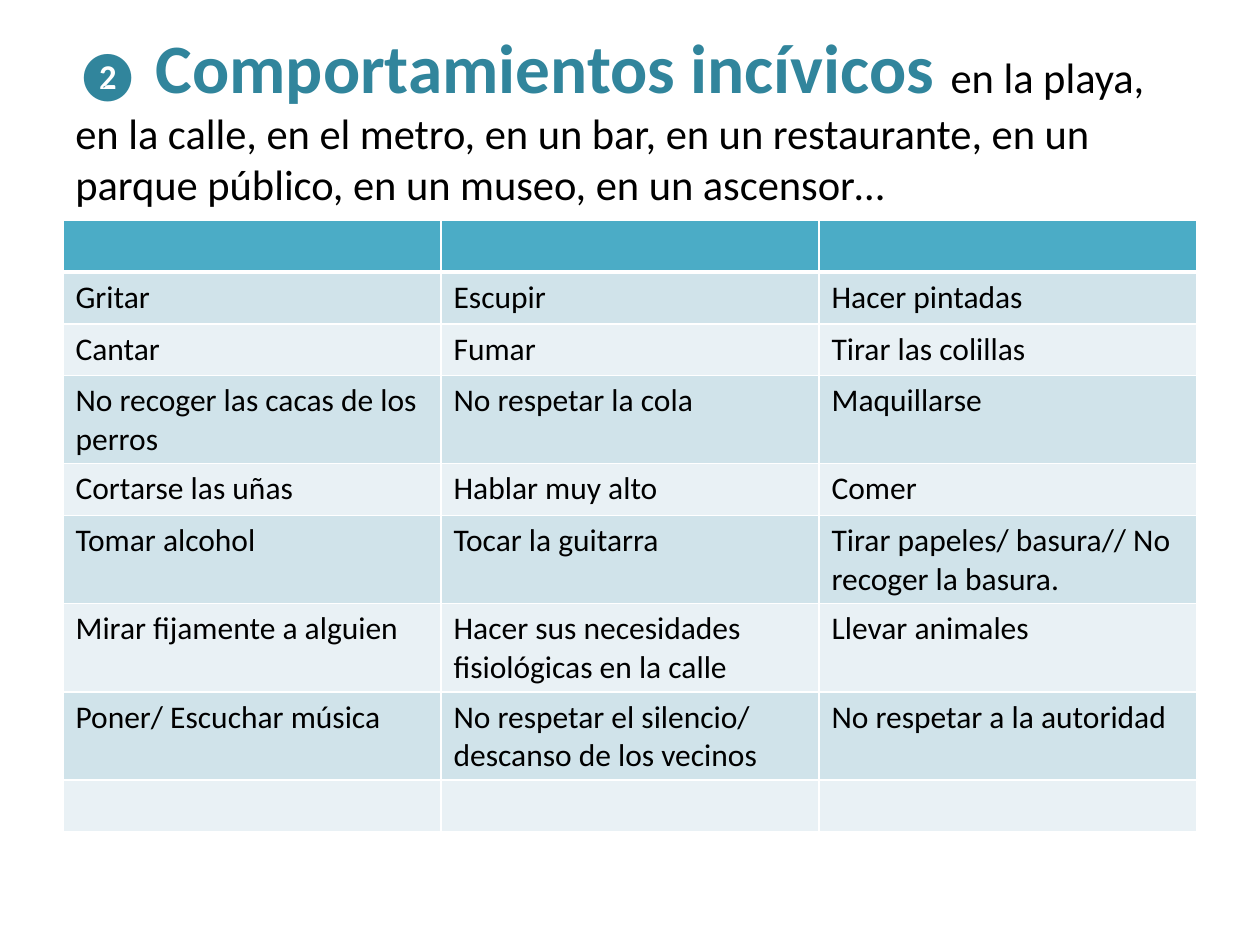
from dataclasses import dataclass

from lxml import etree
from pptx import Presentation
from pptx.dml.color import RGBColor
from pptx.enum.text import MSO_ANCHOR, PP_ALIGN
from pptx.oxml.ns import qn
from pptx.util import Inches, Pt

LEFT = PP_ALIGN.LEFT
MIDDLE = MSO_ANCHOR.MIDDLE

FONT = "Calibri"
COLORS = {
    "accent": "31859C",
    "text": "000000",
    "header": "4BACC6",
    "band_dark": "D0E3EA",
    "band_light": "E9F1F5",
    "border": "FFFFFF",
}

# Slide size and shared margins, in inches
WIDTH, HEIGHT = 10, 7.5
MARGIN = WIDTH * 0.05
CONTENT_WIDTH = WIDTH - 2 * MARGIN
ROW_HEIGHT = 0.41


@dataclass(frozen=True)
class TextPiece:
    text: str
    size: float
    color: str
    bold: bool = False


TITLE = [
    TextPiece("❷", 27.9, "accent"),
    TextPiece(" ", 39.6, "accent"),
    TextPiece("Comportamientos incívicos ", 39.6, "accent", True),
    TextPiece("en la playa, en la calle, en el metro, en un bar, en un restaurante, "
              "en un parque público, en un museo, en un ascensor…", 24.3, "text"),
]

BEHAVIOURS = [
    ("", "", ""),
    ("Gritar", "Escupir", "Hacer pintadas"),
    ("Cantar", "Fumar", "Tirar las colillas"),
    ("No recoger las cacas de los perros", "No respetar la cola", "Maquillarse"),
    ("Cortarse las uñas", "Hablar muy alto", "Comer"),
    ("Tomar alcohol", "Tocar la guitarra",
     "Tirar papeles/ basura// No recoger la basura."),
    ("Mirar fijamente a alguien",
     "Hacer sus necesidades fisiológicas en la calle", "Llevar animales"),
    ("Poner/ Escuchar música",
     "No respetar el silencio/ descanso de los vecinos",
     "No respetar a la autoridad"),
    ("", "", ""),
]


def rgb(name: str) -> RGBColor:
    return RGBColor.from_string(COLORS[name])


def add_run(paragraph, piece: TextPiece) -> None:
    run = paragraph.add_run()
    run.text = piece.text
    run.font.name = FONT
    run.font.size = Pt(piece.size)
    run.font.bold = piece.bold
    run.font.color.rgb = rgb(piece.color)


def add_title(slide) -> None:
    shape = slide.shapes.add_textbox(Inches(MARGIN), Inches(HEIGHT * 0.04),
                                     Inches(CONTENT_WIDTH), Inches(1.25))
    text_frame = shape.text_frame
    text_frame.word_wrap = True
    text_frame.vertical_anchor = MIDDLE
    paragraph = text_frame.paragraphs[0]
    paragraph.alignment = LEFT
    for piece in TITLE:
        add_run(paragraph, piece)


def set_borders(cell, bottom_width: float) -> None:
    properties = cell._tc.get_or_add_tcPr()
    widths = {"lnL": 1, "lnR": 1, "lnT": 1, "lnB": bottom_width}
    for position, (side, width) in enumerate(widths.items()):
        line = etree.Element(qn(f"a:{side}"), w=str(Pt(width)))
        fill = etree.SubElement(line, qn("a:solidFill"))
        etree.SubElement(fill, qn("a:srgbClr"), val=COLORS["border"])
        properties.insert(position, line)


def row_color(row: int) -> str:
    if row == 0:
        return "header"
    return "band_dark" if row % 2 else "band_light"


def add_behaviour_table(slide) -> None:
    rows, columns = len(BEHAVIOURS), len(BEHAVIOURS[0])
    table = slide.shapes.add_table(
        rows, columns, Inches(MARGIN), Inches(1.75),
        Inches(CONTENT_WIDTH), Inches(rows * ROW_HEIGHT)).table
    for row, texts in enumerate(BEHAVIOURS):
        for column, text in enumerate(texts):
            cell = table.cell(row, column)
            cell.fill.solid()
            cell.fill.fore_color.rgb = rgb(row_color(row))
            set_borders(cell, bottom_width=3 if row == 0 else 1)
            if text:
                add_run(cell.text_frame.paragraphs[0], TextPiece(text, 18, "text"))


def main() -> None:
    presentation = Presentation()
    presentation.slide_width = Inches(WIDTH)
    presentation.slide_height = Inches(HEIGHT)
    slide = presentation.slides.add_slide(presentation.slide_layouts[6])
    add_title(slide)
    add_behaviour_table(slide)
    presentation.save("out.pptx")


if __name__ == "__main__":
    main()
